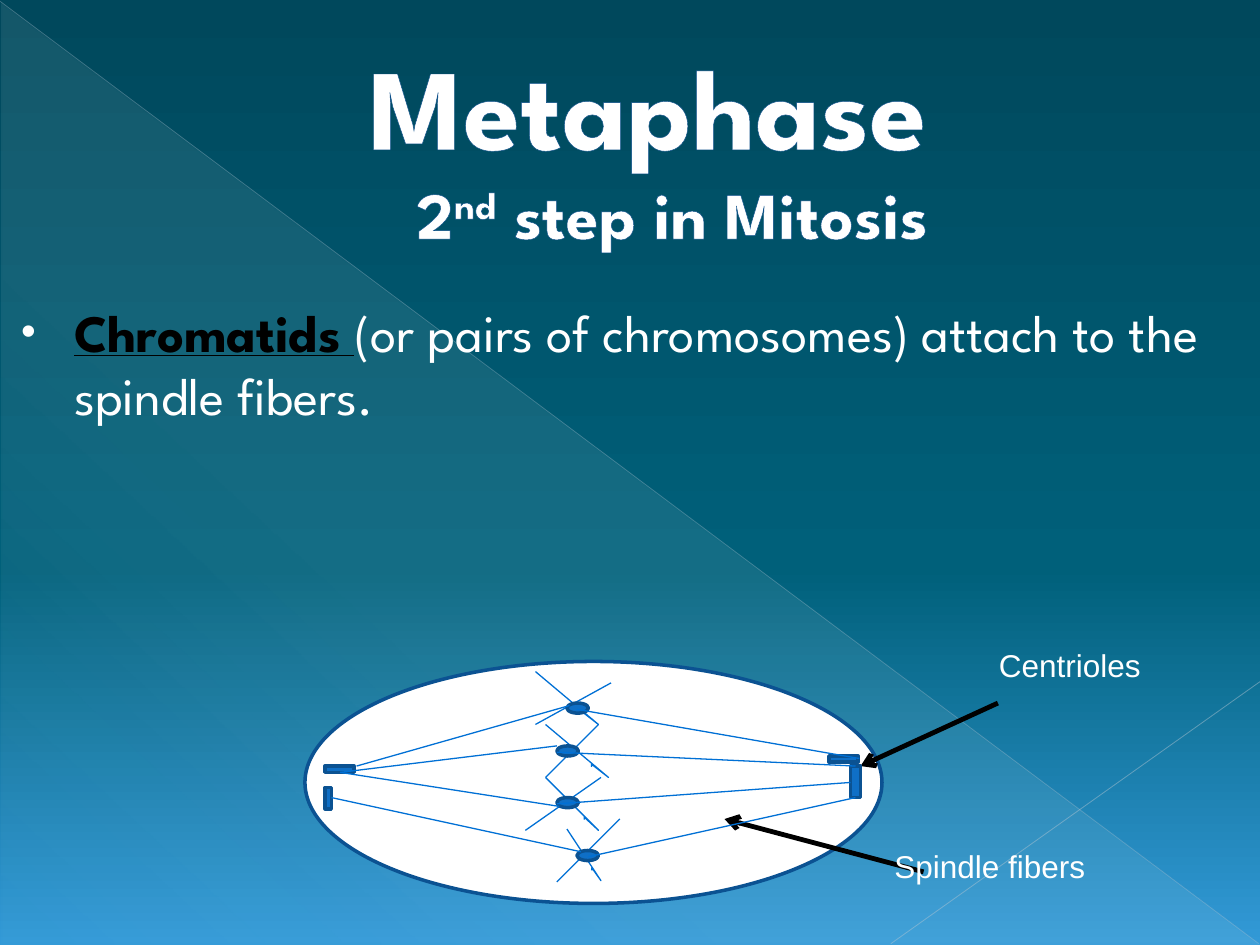
from lxml.etree import SubElement
from pptx import Presentation
from pptx.dml.color import RGBColor
from pptx.enum.shapes import MSO_CONNECTOR, MSO_SHAPE
from pptx.enum.text import MSO_ANCHOR, MSO_AUTO_SIZE, PP_ALIGN
from pptx.oxml.ns import qn
from pptx.util import Cm, Pt

HUES = {
    "deep": "00485C", "teal": "00607A", "sky": "3299D7", "mist": "DBF5F9",
    "gray": "ACC0CE", "pale": "B5C7D3", "white": "FFFFFF", "black": "000000",
    "navy": "0B5292", "blue": "0F6FC6", "fiber": "0070D5", "edge": "0A4D89",
}
FONT = "League Spartan"


def inch(num):
    return Cm(num * 2.54)


def rgb(name):
    return RGBColor.from_string(HUES[name])


def sub(root, tag, **attrs):
    return SubElement(root, qn(tag), {k: str(v) for k, v in attrs.items()})


def blend(root, stops, angle):
    grad = root.find(".//" + qn("a:gradFill"))
    for child in list(grad):
        grad.remove(child)
    items = sub(grad, "a:gsLst")
    for pos, hue, alpha in stops:
        stop = sub(items, "a:gs", pos=pos * 1000)
        color = sub(stop, "a:srgbClr", val=HUES[hue])
        if alpha < 100:
            sub(color, "a:alpha", val=alpha * 1000)
    sub(grad, "a:lin", ang=angle * 60000, scaled=0)


def line(slide, start, end, hue, width, alpha=100, arrow=False):
    wire = slide.shapes.add_connector(
        MSO_CONNECTOR.STRAIGHT, *map(inch, start + end))
    wire.line.color.rgb = rgb(hue)
    wire.line.width = Pt(width)
    props = wire._element.spPr
    if alpha < 100:
        color = props.find(".//" + qn("a:srgbClr"))
        sub(color, "a:alpha", val=alpha * 1000)
    if arrow:
        sub(props.find(qn("a:ln")), "a:tailEnd", type="arrow")
    sub(props, "a:effectLst")


def shape(slide, kind, box, fill):
    form = slide.shapes.add_shape(kind, *map(inch, box))
    form.shadow.inherit = False
    form.fill.solid()
    form.fill.fore_color.rgb = rgb(fill)
    form.line.color.rgb = rgb("navy")
    form.line.width = Pt(2)


def arm(slide, left, top, wide, high, hook):
    if hook:
        steps = [(0, 0), (1, 1), (0.73, 0.75), (0.73, 0.8)]
    else:
        steps = [(1, 0), (0, 1)]
    dots = [(inch(left + x * wide), inch(top + y * high)) for x, y in steps]
    pen = slide.shapes.build_freeform(*dots[0], scale=1.0)
    pen.add_line_segments(dots[1:], close=False)
    form = pen.convert_to_shape()
    form.shadow.inherit = False
    form.fill.background()
    form.line.color.rgb = rgb("fiber")
    form.line.width = Pt(0.75)


def text_box(slide, box, wrap=True):
    form = slide.shapes.add_textbox(*map(inch, box))
    form.text_frame.word_wrap = wrap
    return form.text_frame


def style(run, size, hue="white", font=FONT, bold=False):
    run.font.size = Pt(size)
    run.font.name = font
    run.font.bold = bold
    run.font.color.rgb = rgb(hue)


def add_run(para, text, size, **looks):
    run = para.add_run()
    run.text = text
    style(run, size, **looks)
    return run


def title(slide):
    frame = text_box(slide, (0, 0.17, 10, 1.94))
    frame.vertical_anchor = MSO_ANCHOR.MIDDLE
    para = frame.paragraphs[0]
    para.alignment = PP_ALIGN.CENTER
    para._p.get_or_add_pPr().set("marL", str(inch(0.53)))
    add_run(para, "Metaphase ", 65.7, bold=True)
    para.add_line_break()
    for text in (" 2", "nd", " step in Mitosis"):
        add_run(para, text, 37.8, bold=True)
    para.runs[2].font._element.set("baseline", "30000")
    for run in para.runs:
        props = run.font._element
        edge = sub(props, "a:ln", w=Pt(0.5))
        sub(sub(edge, "a:solidFill"), "a:srgbClr", val=HUES["edge"])
        props.insert(0, edge)


def body(slide):
    para = text_box(slide, (0, 2.33, 10, 2.75)).paragraphs[0]
    props = para._p.get_or_add_pPr()
    props.set("marL", str(inch(0.49)))
    props.set("indent", str(inch(-0.42)))
    sub(sub(props, "a:spcBef"), "a:spcPct", val=20000)
    sub(sub(props, "a:buClr"), "a:srgbClr", val=HUES["white"])
    sub(props, "a:buSzPct", val=80000)
    sub(props, "a:buFont", typeface="Arial")
    sub(props, "a:buChar", char="•")
    term = add_run(para, "Chromatids ", 30, hue="black", bold=True)
    term.font.underline = True
    add_run(para, "(or pairs of chromosomes) attach to the spindle fibers.", 30)


def label(slide, text, box, wrap=True):
    frame = text_box(slide, box, wrap)
    frame.auto_size = MSO_AUTO_SIZE.SHAPE_TO_FIT_TEXT
    frame.text = text
    style(frame.paragraphs[0].runs[0], 18, font="Arial")


def backdrop(slide):
    slide.background.fill.gradient()
    blend(slide._element,
          [(0, "deep", 100), (60, "teal", 100), (100, "sky", 100)], 90)
    wedge = slide.shapes.add_shape(
        MSO_SHAPE.RIGHT_TRIANGLE, *map(inch, (0.01, 0.02, 9.99, 7.48)))
    wedge.shadow.inherit = False
    wedge.line.fill.background()
    wedge.fill.gradient()
    blend(wedge._element,
          [(0, "mist", 10), (70, "mist", 8), (100, "mist", 1)], 133)
    line(slide, (0, 0.01), (9.99, 7.49), "gray", 0.39, alpha=35)
    line(slide, (10, 5.41), (7.07, 7.49), "pale", 0.47, alpha=45)


def cell(slide):
    shape(slide, MSO_SHAPE.OVAL, (2.42, 5.25, 4.58, 1.92), "white")
    line(slide, (7.92, 5.58), (6.83, 6.08), "black", 2.75, arrow=True)
    label(slide, "Centrioles", (7.83, 5.08, 2.17, 0.4))
    line(slide, (7.33, 6.92), (5.75, 6.5), "black", 2.75, arrow=True)
    label(slide, "Spindle fibers", (7, 6.67, 1.73, 0.4), wrap=False)

    arms = [
        (4.5, 6.58, 0.27, 0.41, True), (4.42, 6.5, 0.5, 0.5, False),
        (4.33, 5.75, 0.42, 0.42, False), (4.33, 5.75, 0.5, 0.42, True),
        (4.33, 6.17, 0.42, 0.42, True), (4.17, 6.17, 0.6, 0.42, False),
        (4.25, 5.42, 0.6, 0.33, False), (4.25, 5.33, 0.5, 0.42, True),
    ]
    for spec in arms:
        arm(slide, *spec)

    rods = [(2.58, 6.25, 0.05, 0.17), (6.58, 6, 0.23, 0.05),
            (6.75, 6.08, 0.08, 0.25), (2.58, 6.08, 0.23, 0.05)]
    for box in rods:
        shape(slide, MSO_SHAPE.RECTANGLE, box, "blue")
    for left, top in [(4.5, 5.58), (4.42, 5.92), (4.42, 6.33), (4.58, 6.75)]:
        shape(slide, MSO_SHAPE.FLOWCHART_CONNECTOR,
              (left, top, 0.17, 0.08), "blue")

    fibers = [
        ((2.83, 6.08), (4.52, 5.6)), ((2.7, 6.13), (4.42, 5.92)),
        ((2.7, 6.13), (4.44, 6.4)), ((2.63, 6.33), (4.61, 6.76)),
        ((4.58, 5.63), (6.82, 6.02)), ((4.42, 5.97), (6.79, 6.08)),
        ((4.42, 6.38), (6.75, 6.21)), ((4.67, 6.8), (6.79, 6.33)),
    ]
    for start, end in fibers:
        line(slide, start, end, "fiber", 0.75)


def main():
    deck = Presentation()
    deck.slide_width, deck.slide_height = Cm(25.4), Cm(19.05)
    slide = deck.slides.add_slide(deck.slide_layouts[6])
    backdrop(slide)
    title(slide)
    body(slide)
    cell(slide)
    deck.save("out.pptx")


if __name__ == "__main__":
    main()
